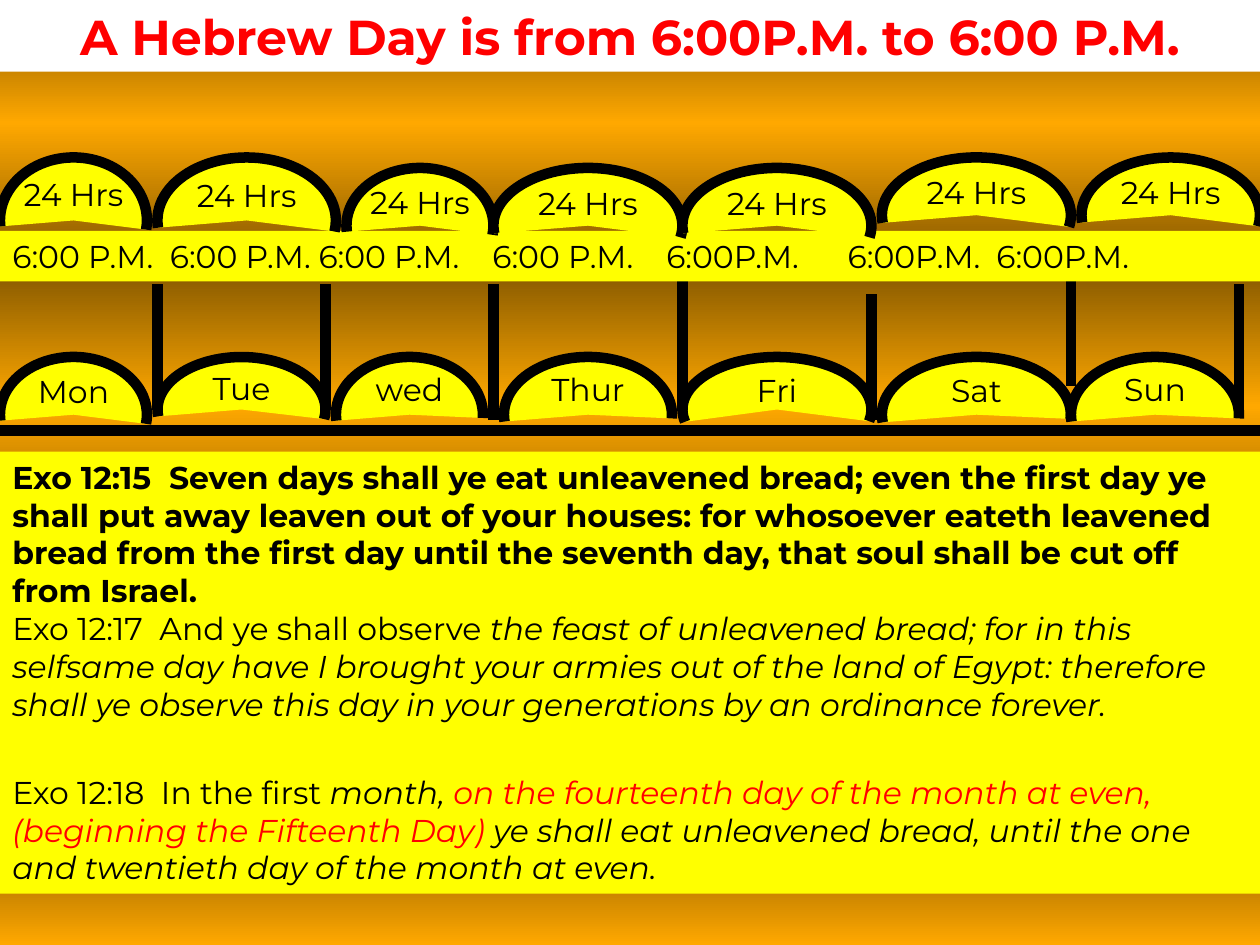
import pptx
import pptx.util
import pptx.dml.color
import pptx.enum.shapes
import pptx.enum.text
import pptx.oxml
import pptx.oxml.ns
from lxml import etree

RGBColor = pptx.dml.color.RGBColor
BLACK = RGBColor(0x00, 0x00, 0x00)
WHITE = RGBColor(0xFF, 0xFF, 0xFF)
YELLOW = RGBColor(0xFF, 0xFF, 0x00)
RED = RGBColor(0xFF, 0x00, 0x00)
GOLD = RGBColor(0xC8, 0xB2, 0x5C)
BROWN = RGBColor(0x82, 0x56, 0x00)
ORANGE = RGBColor(0xFF, 0xA8, 0x00)
FONT = "Montserrat"
COLUMNS, ROWS = 120, 90  # the slide's grid

# Content: runs are (text, style, colour)
TITLE = [[("A Hebrew Day is from 6:00P.M. to 6:00 P.M.", "bold", RED)]]
HOURS = ["6:00 P.M."] * 4 + ["6:00P.M."] * 3
HOUR_TABS = [1.25, 2.43, 3.81, 5.19, 6.63, 7.81]  # inches from the text edge
VERSES = [
    [("Exo 12:15  Seven days shall ye eat unleavened bread; even the first day ye "
      "shall put away leaven out of your houses: for whosoever eateth leavened bread "
      "from the first day until the seventh day, that soul shall be cut off from "
      "Israel.", "bold", BLACK)],
    [("Exo 12:17  And ye shall observe ", "", BLACK),
     ("the feast of unleavened bread; for in this selfsame day have I brought your "
      "armies out of the land of Egypt: therefore shall ye observe this day in your "
      "generations by an ordinance forever.", "italic", BLACK)],
]
LAST_VERSE = [
    [("Exo 12:18  In the first ", "", BLACK),
     ("month, ", "italic", BLACK),
     ("on the fourteenth day of the month at even, (beginning the Fifteenth Day)",
      "italic", RED),
     (" ye shall eat unleavened bread, until the one and twentieth day of the month "
      "at even.", "italic", BLACK)],
]
# Arcs: label, column, row, columns wide, rows high, start and end angle
START, END, FLAT_END = 105.19, 4.32, 1.55
DAY_ARCS = [
    ("Mon", 0, 34, 14, 11, START, END),
    ("Tue", 15, 34, 16, 10, START, 3.98),
    ("wed", 32, 34, 14, 11, START, FLAT_END),
    ("Thur", 48, 34, 16, 11, START, FLAT_END),
    ("Fri", 65, 34, 18, 10, 103.42, 4.35),
    ("Sat", 84, 34, 18, 11, START, FLAT_END),
    ("Sun", 102, 34, 16, 11, START, FLAT_END),
]
HOUR_ARCS = [("24 Hrs", *place, START, END) for place in [
    (15, 15, 17, 12), (33, 16, 14, 11), (47, 16, 18, 11), (65, 16, 18, 11),
    (84, 15, 18, 11), (103, 15, 17, 11), (0, 15, 14, 12)]]
# Dividers: column, bottom row, top row
DIVIDERS = [(15, 39, 27), (31, 39, 27), (47, 40, 27), (65, 39, 26),
            (83, 40, 28), (102, 36.8, 26), (118, 39, 27)]
GRADIENT_STOPS = [0, 13, 28, 43, 58, 72, 87, 100]

presentation = pptx.Presentation()
presentation.slide_width = pptx.util.Inches(10)
presentation.slide_height = pptx.util.Inches(7.5)
slide = presentation.slides.add_slide(presentation.slide_layouts[6])


def across(columns):
    return round(presentation.slide_width * columns / COLUMNS)


def down(rows):
    return round(presentation.slide_height * rows / ROWS)


def add_tag(parent, tag, **attributes):
    return etree.SubElement(parent, pptx.oxml.ns.qn(tag), **attributes)


def format_run(run, size=18, style="", color=BLACK):
    run.font.name = FONT
    run.font.size = pptx.util.Pt(size)
    run.font.bold = style == "bold"
    run.font.italic = style == "italic"
    run.font.color.rgb = color


def add_line(column_1, row_1, column_2, row_2):
    line = slide.shapes.add_connector(
        pptx.enum.shapes.MSO_CONNECTOR.STRAIGHT,
        across(column_1), down(row_1), across(column_2), down(row_2))
    line.line.color.rgb = BLACK
    line.line.width = pptx.util.Pt(6)
    add_tag(line._element.spPr, "a:effectLst")


def add_arc(label, column, row, columns, rows, start, end):
    arc = slide.shapes.add_shape(
        pptx.enum.shapes.MSO_SHAPE.ARC,
        across(column), down(row), across(columns), down(rows))
    arc.adjustments[0], arc.adjustments[1] = start, end
    arc.shadow.inherit = False
    arc.fill.solid()
    arc.fill.fore_color.rgb = YELLOW
    arc.line.color.rgb = BLACK
    arc.line.width = pptx.util.Pt(6)
    arc.text_frame.text = label
    arc.text_frame.vertical_anchor = pptx.enum.text.MSO_ANCHOR.MIDDLE
    paragraph = arc.text_frame.paragraphs[0]
    paragraph.alignment = pptx.enum.text.PP_ALIGN.CENTER
    format_run(paragraph.runs[0])


def add_band(row, height, fill, paragraphs, size=18):
    band = slide.shapes.add_textbox(
        0, down(row), presentation.slide_width, pptx.util.Inches(height))
    band.fill.solid()
    band.fill.fore_color.rgb = fill
    frame = band.text_frame
    frame.word_wrap = True
    frame.auto_size = pptx.enum.text.MSO_AUTO_SIZE.SHAPE_TO_FIT_TEXT
    for index, runs in enumerate(paragraphs):
        paragraph = frame.add_paragraph() if index else frame.paragraphs[0]
        for text, style, color in runs:
            run = paragraph.add_run()
            run.text = text
            format_run(run, size, style, color)
    return frame.paragraphs[0]


# Background of alternating brown and orange
background = slide.background.fill
background.gradient()
background.gradient_angle = 270
stop_list = slide.background._cSld.find(".//" + pptx.oxml.ns.qn("a:gsLst"))
for stop in list(stop_list):
    stop_list.remove(stop)
for index, percent in enumerate(GRADIENT_STOPS):
    stop = add_tag(stop_list, "a:gs", pos=str(percent * 1000))
    add_tag(stop, "a:srgbClr", val=str(ORANGE if index % 2 else BROWN))

# Week timeline
add_line(0, 41, COLUMNS, 41)
for arc in DAY_ARCS:
    add_arc(*arc)
for column, bottom, top in DIVIDERS:
    add_line(column, bottom, column, top)

# Verses and title
add_band(43, 2.52, YELLOW, VERSES)
title = add_band(0, 0.57, WHITE, TITLE, size=28)
title.alignment = pptx.enum.text.PP_ALIGN.CENTER
outline = pptx.oxml.parse_xml(
    f'<a:ln {pptx.oxml.ns.nsdecls("a")} w="10541"><a:solidFill>'
    f'<a:srgbClr val="{GOLD}"/></a:solidFill></a:ln>')
title.runs[0].font._element.insert(0, outline)

# Hours of the day, set out on tab stops
hours = add_band(22, 0.4, YELLOW, [[("\t".join(HOURS), "", BLACK)]])
tab_list = add_tag(hours._p.get_or_add_pPr(), "a:tabLst")
for tab in HOUR_TABS:
    add_tag(tab_list, "a:tab", pos=str(pptx.util.Inches(tab)), algn="l")
for arc in HOUR_ARCS:
    add_arc(*arc)

add_band(73, 1.01, YELLOW, LAST_VERSE)

presentation.save("out.pptx")
